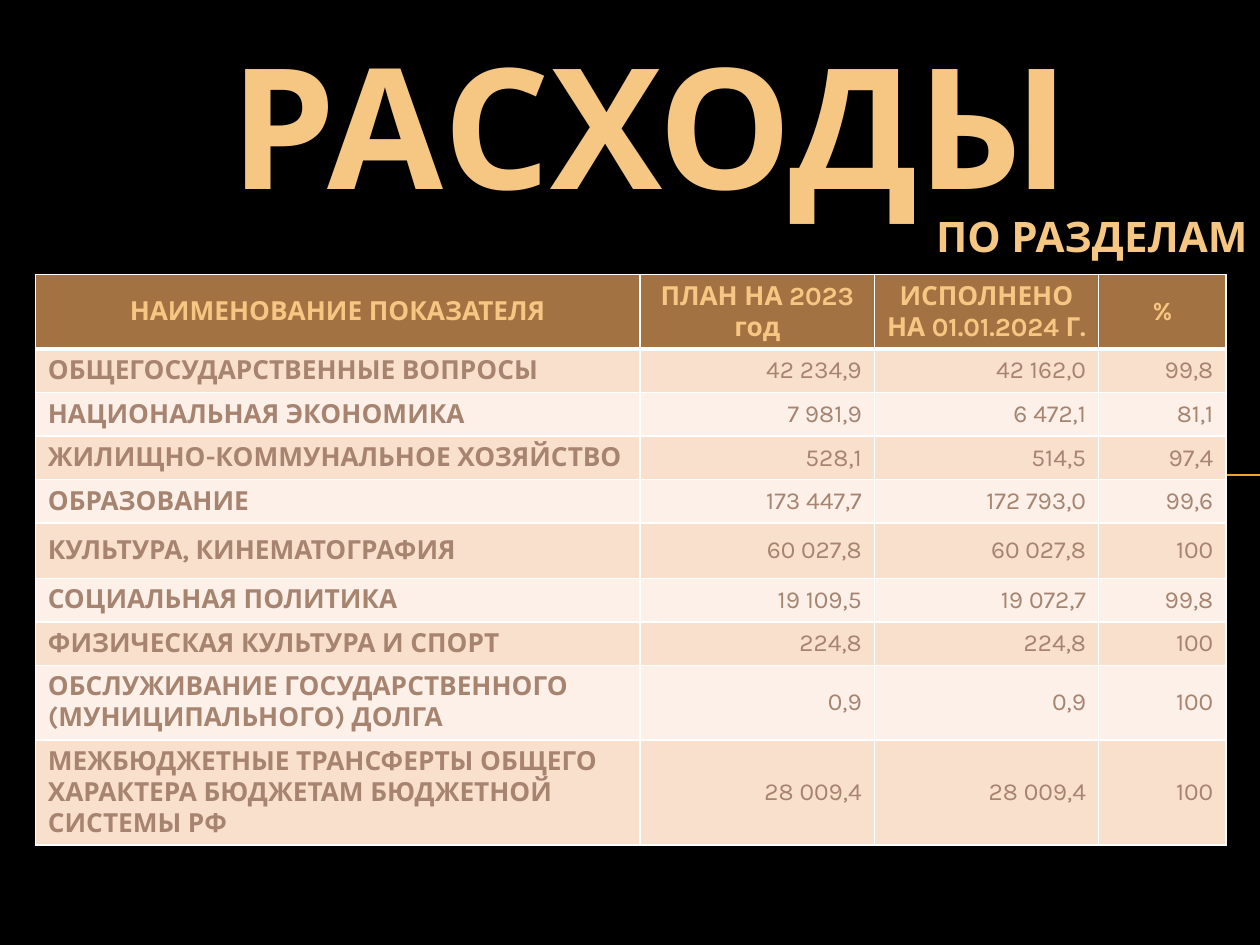
import pptx
import pptx.util
import pptx.dml.color
import pptx.enum.shapes
import pptx.enum.text
import pptx.oxml
import pptx.oxml.ns

Inches = pptx.util.Inches
Align = pptx.enum.text.PP_ALIGN
Anchor = pptx.enum.text.MSO_ANCHOR

THEME = {
    "font": "Karla",
    "background": "000000",
    "gold": "F6C782",
    "rule": "F0A22E",
    "header": "A27242",
    "label": "A78470",
    "border": "FFFFFF",
    "bands": ("F9E0CD", "FCF0E8"),
    "title_size": 96,
    "subtitle_size": 24,
    "label_size": 15,
    "value_size": 14,
}

HEADINGS = ("НАИМЕНОВАНИЕ ПОКАЗАТЕЛЯ", "ПЛАН НА 2023 год", "ИСПОЛНЕНО НА 01.01.2024 Г.", "%")
EXPENSES = (
    ("ОБЩЕГОСУДАРСТВЕННЫЕ ВОПРОСЫ", "42 234,9", "42 162,0", "99,8"),
    ("НАЦИОНАЛЬНАЯ ЭКОНОМИКА", "7 981,9", "6 472,1", "81,1"),
    ("ЖИЛИЩНО-КОММУНАЛЬНОЕ ХОЗЯЙСТВО", "528,1", "514,5", "97,4"),
    ("ОБРАЗОВАНИЕ", "173 447,7", "172 793,0", "99,6"),
    ("КУЛЬТУРА, КИНЕМАТОГРАФИЯ", "60 027,8", "60 027,8", "100"),
    ("СОЦИАЛЬНАЯ ПОЛИТИКА", "19 109,5", "19 072,7", "99,8"),
    ("ФИЗИЧЕСКАЯ КУЛЬТУРА И СПОРТ", "224,8", "224,8", "100"),
    ("ОБСЛУЖИВАНИЕ ГОСУДАРСТВЕННОГО (МУНИЦИПАЛЬНОГО) ДОЛГА", "0,9", "0,9", "100"),
    ("МЕЖБЮДЖЕТНЫЕ ТРАНСФЕРТЫ ОБЩЕГО ХАРАКТЕРА БЮДЖЕТАМ БЮДЖЕТНОЙ СИСТЕМЫ РФ",
     "28 009,4", "28 009,4", "100"),
)
COLUMN_WIDTHS = (4.8, 1.86, 1.78, 1.01)
ROW_HEIGHTS = (0.56, 0.3, 0.28, 0.29, 0.31, 0.44, 0.28, 0.26, 0.48, 0.56)


def color(name):
    return pptx.dml.color.RGBColor.from_string(name)


def write(frame, text, size, ink, align, bold=True):
    """Fill a text frame with one formatted paragraph."""
    para = frame.paragraphs[0]
    para.alignment = align
    span = para.add_run()
    span.text = text
    formats = {"name": THEME["font"], "size": pptx.util.Pt(size), "bold": bold}
    for key, value in formats.items():
        setattr(span.font, key, value)
    span.font.color.rgb = color(ink)


deck = pptx.Presentation()
deck.slide_width, deck.slide_height = Inches(10), Inches(7.5)
page = deck.slides.add_slide(deck.slide_layouts.get_by_name("Title Only"))
page.background.fill.solid()
page.background.fill.fore_color.rgb = color(THEME["background"])

# Rule running off the right edge behind the table
rule = page.shapes.add_connector(
    pptx.enum.shapes.MSO_CONNECTOR.STRAIGHT,
    Inches(0.56), Inches(3.77), Inches(10), Inches(3.77))
rule.line.color.rgb = color(THEME["rule"])
rule.line.width = pptx.util.Pt(0.75)
rule._element.spPr.append(pptx.oxml.parse_xml(
    f'<a:effectLst {pptx.oxml.ns.nsdecls("a")}/>'))

# Title
title = page.shapes.title
title_place = {"left": 0.91, "top": 0, "width": 8.5, "height": 1.49}
for key, value in title_place.items():
    setattr(title, key, Inches(value))
title_format = {
    "vertical_anchor": Anchor.TOP,
    "margin_top": Inches(0.17),
    "auto_size": pptx.enum.text.MSO_AUTO_SIZE.NONE,
    "word_wrap": True,
}
for key, value in title_format.items():
    setattr(title.text_frame, key, value)
write(title.text_frame, "РАСХОДЫ", THEME["title_size"], THEME["gold"], Align.CENTER)

# Expense table
table = page.shapes.add_table(
    len(ROW_HEIGHTS), len(COLUMN_WIDTHS), Inches(0.28), Inches(2.18),
    Inches(sum(COLUMN_WIDTHS)), Inches(sum(ROW_HEIGHTS))).table
for column, width in zip(table.columns, COLUMN_WIDTHS):
    column.width = Inches(width)
for row, height in zip(table.rows, ROW_HEIGHTS):
    row.height = Inches(height)

for r, texts in enumerate((HEADINGS,) + EXPENSES):
    for c, text in enumerate(texts):
        cell = table.cell(r, c)
        cell.vertical_anchor = Anchor.MIDDLE

        # The line under the header is shared by the first two rows
        thick_side = {0: "B", 1: "T"}.get(r)
        for side in "LRTB":
            width = pptx.util.Pt(3 if side == thick_side else 1)
            cell._tc.get_or_add_tcPr().append(pptx.oxml.parse_xml(
                f'<a:ln{side} {pptx.oxml.ns.nsdecls("a")} w="{width}"><a:solidFill>'
                f'<a:srgbClr val="{THEME["border"]}"/></a:solidFill></a:ln{side}>'))
        cell.fill.solid()
        cell.fill.fore_color.rgb = color(THEME["header"] if r == 0 else THEME["bands"][(r - 1) % 2])

        if r == 0:
            write(cell.text_frame, text, THEME["label_size"], THEME["gold"], Align.CENTER)
        elif c == 0:
            write(cell.text_frame, text, THEME["label_size"], THEME["label"], Align.LEFT)
        else:
            write(cell.text_frame, text, THEME["value_size"], THEME["label"], Align.RIGHT, bold=False)

# Subtitle
subtitle = page.shapes.add_textbox(Inches(3.7), Inches(1.62), Inches(6.3), Inches(0.5))
subtitle.text_frame.word_wrap = True
subtitle.text_frame.auto_size = pptx.enum.text.MSO_AUTO_SIZE.SHAPE_TO_FIT_TEXT
write(subtitle.text_frame, "ПО РАЗДЕЛАМ", THEME["subtitle_size"], THEME["gold"], Align.RIGHT)

deck.save("out.pptx")
